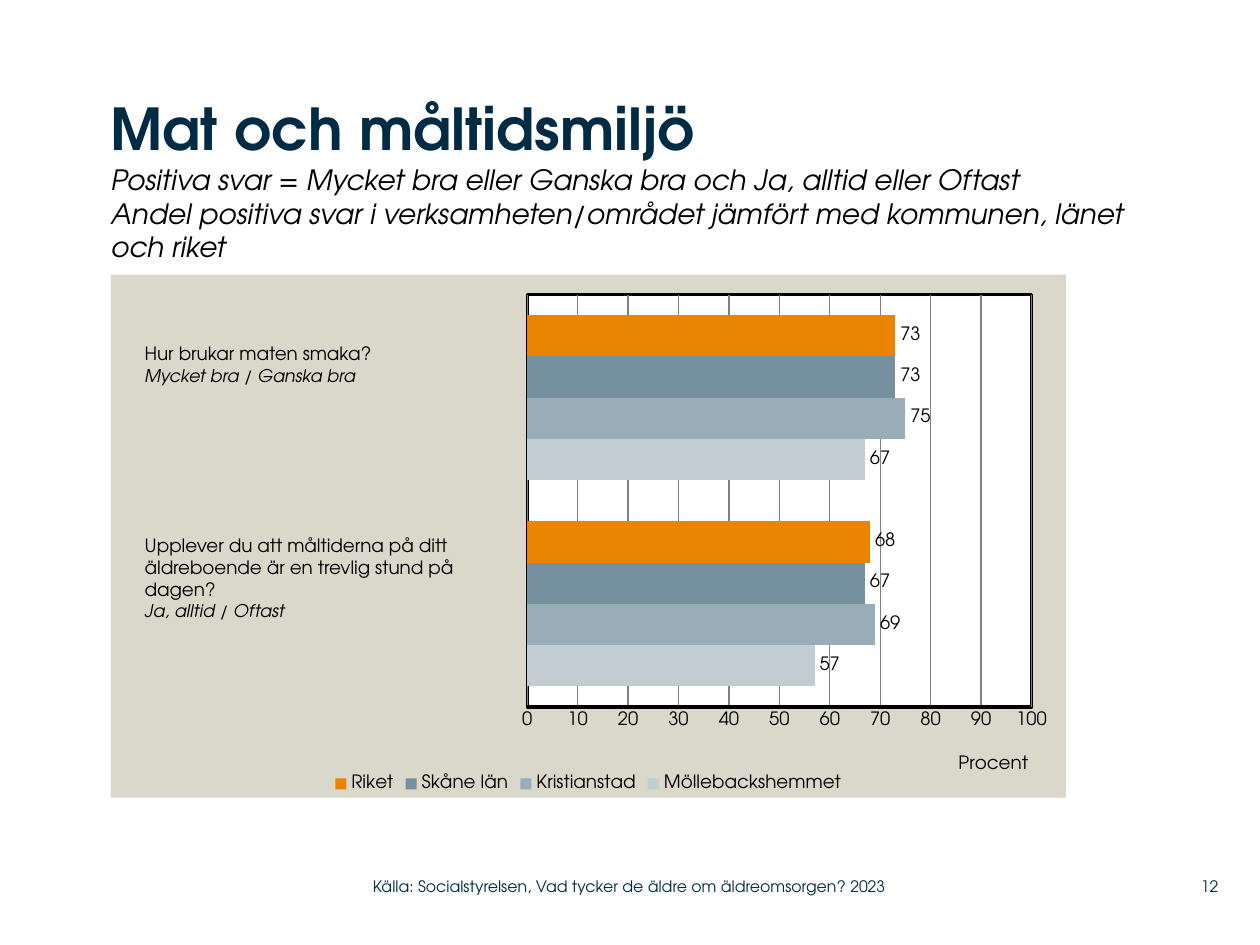
from dataclasses import dataclass
from typing import NamedTuple

from lxml import etree
from pptx import Presentation
from pptx.chart.chart import Chart
from pptx.chart.data import CategoryChartData
from pptx.dml.color import RGBColor
from pptx.enum.chart import XL_CHART_TYPE, XL_LABEL_POSITION, XL_LEGEND_POSITION, XL_TICK_MARK
from pptx.enum.text import MSO_ANCHOR, PP_ALIGN
from pptx.oxml import parse_xml
from pptx.oxml.ns import nsdecls, qn
from pptx.slide import Slide
from pptx.util import Inches, Pt

BAR_CLUSTERED = XL_CHART_TYPE.BAR_CLUSTERED
OUTSIDE_END = XL_LABEL_POSITION.OUTSIDE_END
LEGEND_BOTTOM = XL_LEGEND_POSITION.BOTTOM
NO_TICK = XL_TICK_MARK.NONE
TOP, MIDDLE = MSO_ANCHOR.TOP, MSO_ANCHOR.MIDDLE
LEFT, RIGHT = PP_ALIGN.LEFT, PP_ALIGN.RIGHT
COLUMNS, ROWS = 100, 75
CELL = Inches(0.1)


@dataclass(frozen=True)
class Theme:
    font: str = "TeX Gyre Adventor"
    navy: str = "002B45"
    black: str = "000000"
    white: str = "FFFFFF"
    sand: str = "DAD7CB"
    grid: str = "808080"
    title: float = 33
    subtitle: float = 16
    body: float = 10.5
    answer: float = 10
    footer: float = 9


THEME = Theme()


class Area(NamedTuple):
    column: float
    row: float
    columns: float
    rows: float

    def lengths(self) -> list[int]:
        return [round(value * CELL) for value in self]


class Run(NamedTuple):
    text: str
    size: float = THEME.body
    color: str = THEME.black
    bold: bool = False
    italic: bool = False


class Block(NamedTuple):
    area: Area
    paragraphs: list[list[Run]]
    inset: bool = False
    anchor: MSO_ANCHOR = TOP
    alignment: PP_ALIGN = LEFT


class Series(NamedTuple):
    name: str
    values: tuple[int, int]
    color: str


SUBTITLE_LINES = [
    "Positiva svar = Mycket bra eller Ganska bra och Ja, alltid eller Oftast",
    "Andel positiva svar i verksamheten/området jämfört med kommunen, länet och riket",
]
BLOCKS = [
    Block(
        Area(8.8, 7.4, 84.2, 14.4),
        [[Run("Mat och måltidsmiljö", THEME.title, THEME.navy, bold=True)]
         + [Run(line, THEME.subtitle, italic=True) for line in SUBTITLE_LINES]],
    ),
    Block(
        Area(10.5, 26.7, 27.7, 6.3),
        [[Run("Hur brukar maten smaka?")],
         [Run("Mycket bra / Ganska bra", THEME.answer, italic=True)]],
        inset=True,
    ),
    Block(
        Area(10.5, 41.9, 27.7, 9.8),
        [[Run("Upplever du att måltiderna på ditt äldreboende är en trevlig stund på")],
         [Run("dagen?")],
         [Run("Ja, alltid / Oftast", THEME.answer, italic=True)]],
        inset=True,
    ),
    Block(
        Area(92, 68.9, 4.7, 2.9),
        [[Run("12", THEME.footer, THEME.navy)]],
        anchor=MIDDLE,
        alignment=RIGHT,
    ),
    Block(
        Area(29.6, 68.9, 44.3, 2.9),
        [[Run("Källa: Socialstyrelsen, Vad tycker de äldre om äldreomsorgen? 2023",
              THEME.footer, THEME.navy)]],
        anchor=MIDDLE,
    ),
]
CHART_AREA = Area(8.8, 21.8, 75.8, 41.5)
SERIES = [
    Series("Möllebackshemmet", (57, 67), "C2CDD3"),
    Series("Kristianstad", (69, 75), "99ADB9"),
    Series("Skåne län", (67, 73), "75909F"),
    Series("Riket", (68, 73), "E98300"),
]


def style_font(font, size: float, color: str = THEME.black) -> None:
    font.name = THEME.font
    font.size = Pt(size)
    font.color.rgb = RGBColor.from_string(color)


def add_block(slide: Slide, block: Block) -> None:
    frame = slide.shapes.add_textbox(*block.area.lengths()).text_frame
    frame.word_wrap = True
    frame.vertical_anchor = block.anchor
    if not block.inset:
        frame.margin_left = frame.margin_right = frame.margin_top = frame.margin_bottom = 0
    for index, runs in enumerate(block.paragraphs):
        paragraph = frame.add_paragraph() if index else frame.paragraphs[0]
        paragraph.alignment = block.alignment
        for position, item in enumerate(runs):
            if position:
                paragraph.add_line_break()
            run = paragraph.add_run()
            run.text = item.text
            style_font(run.font, item.size, item.color)
            run.font.bold, run.font.italic = item.bold, item.italic


def set_layout(parent: etree._Element, index: int, **shares: float | str) -> None:
    for layout in parent.findall(qn("c:layout")):
        parent.remove(layout)
    settings = "".join(f'<c:{name} val="{value}"/>' for name, value in shares.items())
    parent.insert(index, parse_xml(
        f'<c:layout {nsdecls("c")}><c:manualLayout>{settings}</c:manualLayout></c:layout>'))


def area_style(fill: str, line: str) -> etree._Element:
    return parse_xml(
        f'<c:spPr {nsdecls("c", "a")}><a:solidFill><a:srgbClr val="{fill}"/></a:solidFill>'
        f'{line}</c:spPr>')


def style_areas(chart: Chart) -> None:
    chart_element = chart._chartSpace.find(qn("c:chart"))
    chart_element.addnext(area_style(THEME.sand, "<a:ln><a:noFill/></a:ln>"))
    plot_area = chart_element.find(qn("c:plotArea"))
    set_layout(plot_area, 0, layoutTarget="inner", xMode="edge", yMode="edge",
               x=0.436, y=0.038, w=0.528, h=0.789)
    border = (f'<a:ln w="{Pt(2)}"><a:solidFill><a:srgbClr val="{THEME.black}"/>'
              "</a:solidFill></a:ln>")
    plot_area.append(area_style(THEME.white, border))


def style_value_axis(chart: Chart) -> None:
    axis = chart.value_axis
    axis.minimum_scale, axis.maximum_scale, axis.major_unit = 0, 100, 10
    axis.major_tick_mark = axis.minor_tick_mark = NO_TICK
    style_font(axis.tick_labels.font, THEME.body)
    axis.format.line.color.rgb = RGBColor.from_string(THEME.black)
    axis.format.line.width = Pt(2)
    gridline = axis.major_gridlines.format.line
    gridline.color.rgb = RGBColor.from_string(THEME.grid)
    gridline.width = Pt(0.75)
    run = axis.axis_title.text_frame.paragraphs[0].add_run()
    run.text = "Procent"
    style_font(run.font, THEME.body)
    run.font.bold = False
    set_layout(axis.axis_title._element, 1, xMode="edge", yMode="edge", x=0.884, y=0.91)


def add_answer_chart(slide: Slide) -> None:
    data = CategoryChartData()
    data.categories = ["1", "2"]
    for series in SERIES:
        data.add_series(series.name, series.values)
    chart = slide.shapes.add_chart(BAR_CLUSTERED, *CHART_AREA.lengths(), data).chart
    style_areas(chart)
    style_font(chart.font, THEME.body)
    chart.has_title = False
    chart.category_axis.visible = False
    style_value_axis(chart)
    chart.has_legend = True
    chart.legend.position = LEGEND_BOTTOM
    chart.legend.include_in_layout = False
    style_font(chart.legend.font, THEME.body)
    plot = chart.plots[0]
    plot.gap_width, plot.overlap, plot.vary_by_categories = 100, 0, False
    for drawn, series in zip(plot.series, SERIES):
        drawn.format.fill.solid()
        drawn.format.fill.fore_color.rgb = RGBColor.from_string(series.color)
        labels = drawn.data_labels
        labels.show_value = True
        labels.position = OUTSIDE_END
        style_font(labels.font, THEME.body)


def main() -> None:
    presentation = Presentation()
    presentation.slide_width, presentation.slide_height = COLUMNS * CELL, ROWS * CELL
    slide = presentation.slides.add_slide(presentation.slide_layouts[6])
    add_answer_chart(slide)
    for block in BLOCKS:
        add_block(slide, block)
    presentation.save("out.pptx")


if __name__ == "__main__":
    main()
